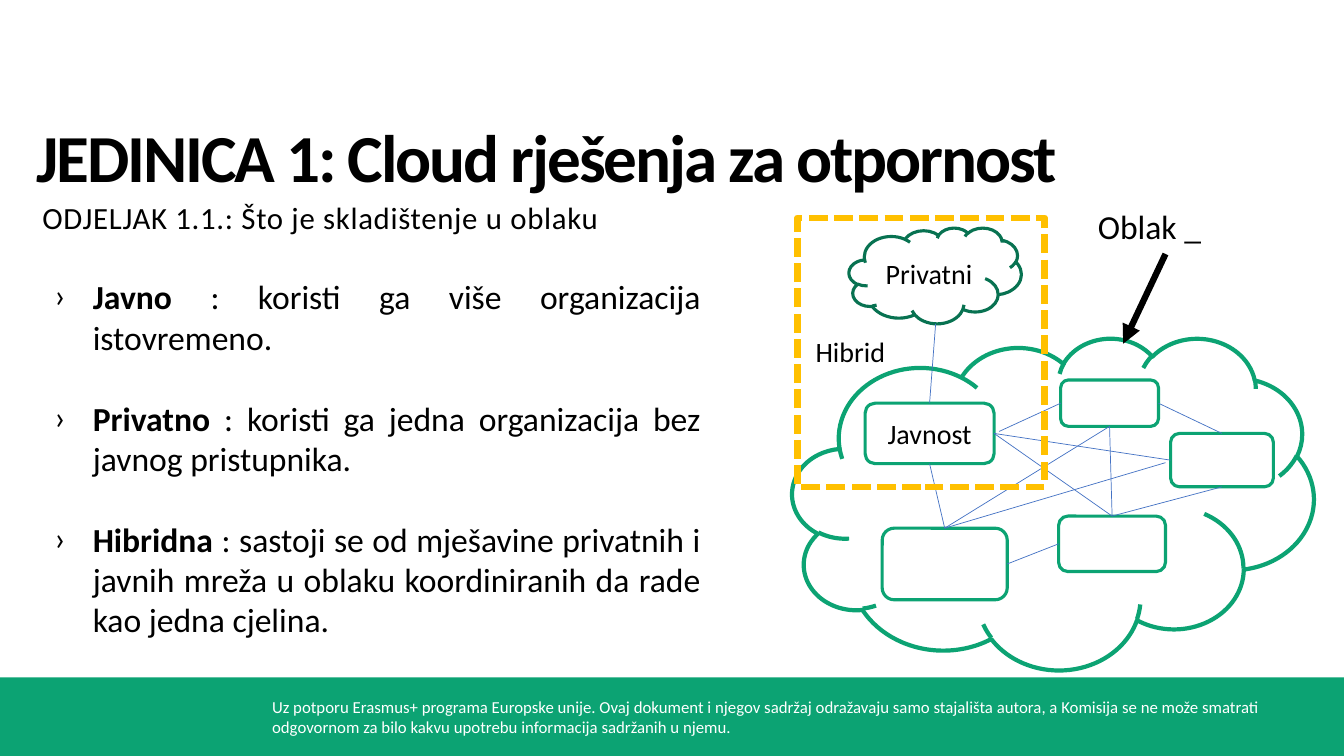
from lxml import etree
from pptx import Presentation
from pptx.dml.color import RGBColor
from pptx.enum.dml import MSO_LINE
from pptx.enum.shapes import MSO_CONNECTOR as CONN, MSO_SHAPE as SHAPE
from pptx.enum.text import MSO_ANCHOR as ANCHOR, MSO_AUTO_SIZE as AUTO, PP_ALIGN as ALIGN
from pptx.oxml.ns import qn
from pptx.util import Inches, Pt

GREEN, DARK_GREEN, YELLOW, BLUE = "0CA373", "087251", "FFC000", "4472C4"
BLACK, WHITE = "000000", "FFFFFF"
TOP, LEFT, BOTTOM, RIGHT = range(4)


def color(value):
    return RGBColor.from_string(value)


class SlideBuilder:
    font = "Calibri"

    def __init__(self, slide):
        self.slide = slide
        self.shapes = slide.shapes

    def run(self, p, text, size, fill=BLACK, bold=False, spacing=0):
        r = p.add_run()
        r.text = text
        r.font.name, r.font.size, r.font.bold = self.font, Pt(size), bold
        r.font.color.rgb = color(fill)
        if spacing:
            r.font._element.set("spc", str(int(spacing * 100)))

    def frame(self, sp, insets=(0.1, 0.05, 0.1, 0.05), anchor=ANCHOR.TOP):
        tf = sp.text_frame
        tf.word_wrap, tf.auto_size, tf.vertical_anchor = True, AUTO.NONE, anchor
        tf.margin_left, tf.margin_top, tf.margin_right, tf.margin_bottom = map(Inches, insets)
        return tf

    def place(self, sp, box):
        sp.left, sp.top, sp.width, sp.height = map(Inches, box)

    def title(self, box, text, size, spacing):
        sp = self.shapes.title
        self.place(sp, box)
        p = self.frame(sp, (0.01, 0.02, 0, 0)).paragraphs[0]
        p.alignment = ALIGN.LEFT
        self.run(p, text, size, bold=True, spacing=spacing)

    def bullets(self, box, items, size, gap):
        sp = self.slide.placeholders[1]
        self.place(sp, box)
        tf = self.frame(sp)
        for i, (term, meaning) in enumerate(items):
            p = tf.add_paragraph() if i else tf.paragraphs[0]
            pPr = p._p.get_or_add_pPr()
            pPr.set("marL", str(Inches(0.38)))
            pPr.set("indent", str(-Inches(0.38)))
            etree.SubElement(pPr, qn("a:buFont")).set("typeface", self.font)
            etree.SubElement(pPr, qn("a:buChar")).set("char", "›")
            p.alignment, p.line_spacing = ALIGN.JUSTIFY, 1.0
            p.space_before = Pt(gap if i else 0)
            self.run(p, term, size, bold=True)
            self.run(p, meaning, size)

    def text(self, box, text, size, fill=BLACK, spacing=0, **layout):
        sp = self.shapes.add_textbox(*map(Inches, box))
        self.run(self.frame(sp, **layout).paragraphs[0], text, size, fill, spacing=spacing)

    def shape(self, kind, box, fill=None, line=None, width=0, dash=None, label=None):
        sp = self.shapes.add_shape(kind, *map(Inches, box))
        sp.shadow.inherit = False
        if fill:
            sp.fill.solid()
            sp.fill.fore_color.rgb = color(fill)
        else:
            sp.fill.background()
        if line:
            sp.line.color.rgb, sp.line.width = color(line), Pt(width)
            if dash:
                sp.line.dash_style = dash
        else:
            sp.line.fill.background()
        if label:
            p = self.frame(sp, anchor=ANCHOR.MIDDLE).paragraphs[0]
            p.alignment = ALIGN.CENTER
            self.run(p, label, 20)
        return sp

    def line(self, start, end, stroke=BLUE, width=0.5, arrow=False):
        cn = self.shapes.add_connector(CONN.STRAIGHT, *map(Inches, (*start, *end)))
        cn.line.color.rgb, cn.line.width = color(stroke), Pt(width)
        if arrow:
            etree.SubElement(cn.line._get_or_add_ln(), qn("a:tailEnd")).set("type", "triangle")
        etree.SubElement(cn._element.spPr, qn("a:effectLst"))
        return cn

    def link(self, node, side, target, target_side=None):
        cn = self.line((0, 0), (1, 1) if target_side is not None else target)
        cn.begin_connect(node, side)
        if target_side is not None:
            cn.end_connect(target, target_side)


def main():
    prs = Presentation()
    prs.slide_width, prs.slide_height = Inches(13.33), Inches(7.5)
    s = SlideBuilder(prs.slides.add_slide(prs.slide_layouts[1]))

    s.shape(SHAPE.RECTANGLE, (0, 6.72, 13.33, 0.78), fill=GREEN)
    s.text((2.6, 6.86, 10.42, 0.5),
           "Uz potporu Erasmus+ programa Europske unije. Ovaj dokument i njegov sadržaj "
           "odražavaju samo stajališta autora, a Komisija se ne može smatrati odgovornom "
           "za bilo kakvu upotrebu informacija sadržanih u njemu.", 12, WHITE)

    s.title((0.35, 1.12, 10.44, 0.82), "JEDINICA 1: Cloud rješenja za otpornost", 48, -1.5)
    s.text((0.41, 1.94, 5.89, 0.39), "ODJELJAK 1.1.: Što je skladištenje u oblaku", 22,
           spacing=0.5, insets=(0.01, 0.03, 0, 0))
    s.bullets((0.44, 2.69, 6.61, 3.74), [
        ("Javno ", ": koristi ga više organizacija istovremeno."),
        ("Privatno ", ": koristi ga jedna organizacija bez javnog pristupnika."),
        ("Hibridna ", ": sastoji se od mješavine privatnih i javnih mreža u oblaku "
                      "koordiniranih da rade kao jedna cjelina."),
    ], 24, 29)

    s.shape(SHAPE.CLOUD, (7.86, 3.35, 5.17, 3.29), WHITE, GREEN, 3)
    node_boxes = [
        ((8.58, 4, 1.28, 0.6), "Javnost"),
        ((10.52, 3.77, 0.97, 0.46), None),
        ((11.61, 4.3, 1.02, 0.53), None),
        ((10.5, 5.12, 1.06, 0.55), None),
        ((8.75, 5.24, 1.24, 0.71), None),
    ]
    public, upper, east, lower, west = [
        s.shape(SHAPE.ROUNDED_RECTANGLE, box, WHITE, GREEN, 2.25, label=label)
        for box, label in node_boxes]
    s.shape(SHAPE.CLOUD, (8.42, 2.26, 1.71, 0.95), WHITE, DARK_GREEN, 2.25, label="Privatni")

    for ends in [
        (west, RIGHT, lower, LEFT),
        (lower, TOP, east, BOTTOM),
        (public, RIGHT, east, LEFT),
        (upper, RIGHT, east, TOP),
        (upper, LEFT, (9.91, 4.28)),
        (public, BOTTOM, west, TOP),
        (public, RIGHT, lower, TOP),
        (public, TOP, (9.28, 3.21)),
        (upper, BOTTOM, west, TOP),
        (lower, TOP, upper, BOTTOM),
        (west, TOP, (11.56, 4.59)),
    ]:
        s.link(*ends)

    s.shape(SHAPE.RECTANGLE, (7.91, 2.16, 2.45, 2.67), line=YELLOW, width=4.5,
            dash=MSO_LINE.SQUARE_DOT)
    s.text((7.99, 3.27, 1.01, 0.44), "Hibrid", 20)
    s.text((10.79, 1.99, 2.3, 0.5), "Oblak _", 24)
    s.line((11.56, 2.52), (11.14, 3.41), BLACK, 4.5, arrow=True)

    prs.save("out.pptx")


if __name__ == "__main__":
    main()
